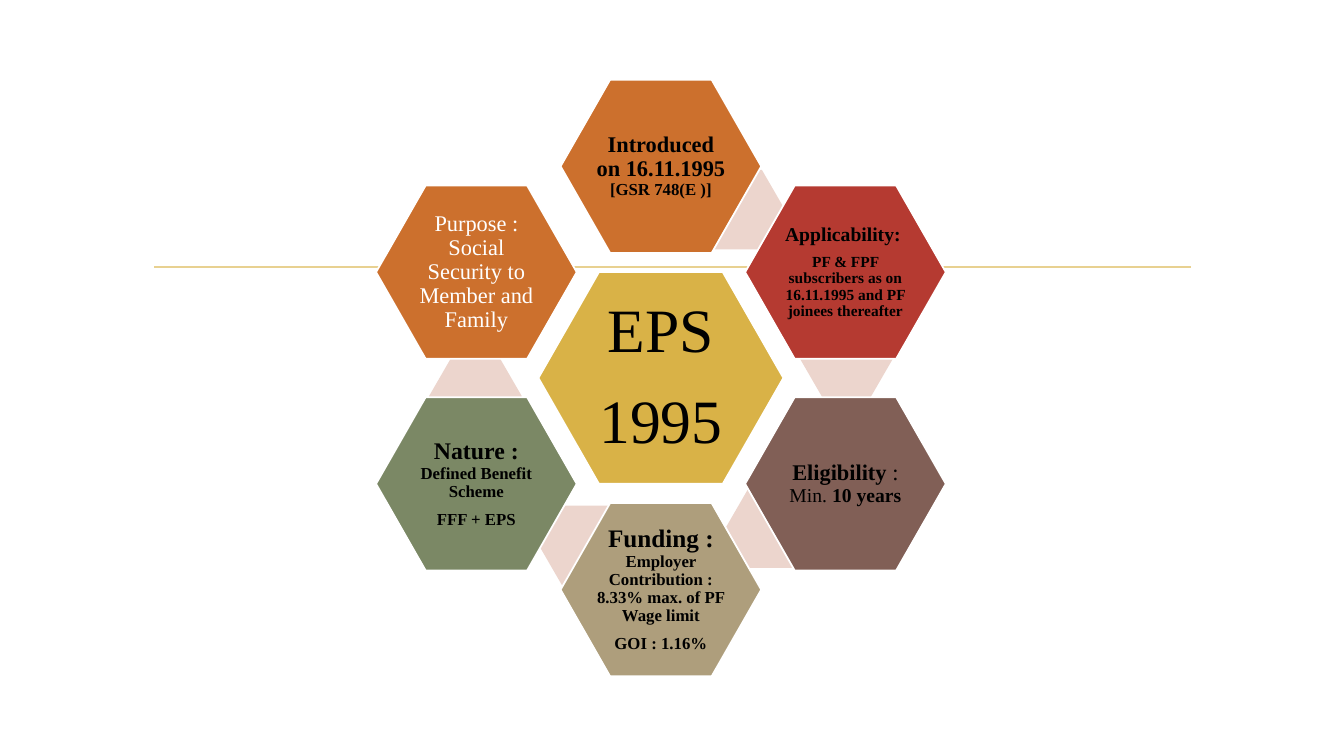
from pptx import Presentation
from pptx.dml.color import RGBColor
from pptx.enum.shapes import MSO_CONNECTOR, MSO_SHAPE
from pptx.enum.text import MSO_ANCHOR, PP_ALIGN
from pptx.oxml.ns import qn
from pptx.util import Inches, Pt
from lxml import etree

HEX = MSO_SHAPE.HEXAGON
STRAIGHT = MSO_CONNECTOR.STRAIGHT
MIDDLE = MSO_ANCHOR.MIDDLE
CENTER = PP_ALIGN.CENTER

BLACK = RGBColor(0x00, 0x00, 0x00)
WHITE = RGBColor(0xFF, 0xFF, 0xFF)
GOLD = RGBColor(0xD9, 0xB2, 0x47)
PALE = RGBColor(0xE8, 0xD1, 0x91)
PINK = RGBColor(0xEC, 0xD5, 0xCD)
ORANGE = RGBColor(0xCC, 0x70, 0x2D)
RED = RGBColor(0xB5, 0x3A, 0x31)
BROWN = RGBColor(0x81, 0x5F, 0x56)
TAN = RGBColor(0xAE, 0x9E, 0x7C)
GREEN = RGBColor(0x7B, 0x88, 0x65)

FONT = "Times New Roman"

# Column and row steps between hexagon centres
DX, DY = 1.83, 1.05

# Each cell: column, row, fill, text colour, paragraphs of (text, size, bold)
CELLS = [
    (0, -2, ORANGE, BLACK, [[("Introduced on 16.11.1995 ", 16, True),
                             ("[GSR 748(E )]", 12, True)]]),
    (1, -1, RED, BLACK, [[("Applicability: ", 14, True)],
                         [("PF & FPF subscribers as on 16.11.1995 and "
                           "PF joinees thereafter", 11, True)]]),
    (1, 1, BROWN, BLACK, [[("Eligibility", 16, True), (" : ", 16, False),
                           ("Min. ", 14, False), ("10 years", 14, True)]]),
    (0, 2, TAN, BLACK, [[("Funding : ", 18, True),
                         ("Employer Contribution : 8.33% max. of PF "
                          "Wage limit", 12, True)],
                        [("GOI : 1.16%", 12, True)]]),
    (-1, 1, GREEN, BLACK, [[("Nature : ", 17, True),
                            ("Defined Benefit Scheme", 12, True)],
                           [("FFF + EPS", 12, True)]]),
    (-1, -1, ORANGE, WHITE, [[("Purpose : Social Security to Member and "
                               "Family", 16, False)]]),
]

# Bridge centres, measured from the hub
BRIDGES = [(0.77, -1.67), (1.84, -0.19), (1.1, 1.49), (-0.75, 1.66),
           (-1.84, 0.18)]


def write(frame, paras, color=BLACK, inset=0.02):
    """Fill a text frame with paragraphs of formatted runs."""
    frame.word_wrap = True
    frame.vertical_anchor = MIDDLE
    frame.margin_left = frame.margin_right = Inches(inset)
    frame.margin_top = frame.margin_bottom = Inches(inset)
    for i, runs in enumerate(paras):
        para = frame.paragraphs[0] if i == 0 else frame.add_paragraph()
        para.alignment = CENTER
        para.line_spacing = 0.9
        para.space_after = Pt(round(0.4 * runs[0][1]))
        for text, size, bold in runs:
            run = para.add_run()
            run.text = text
            run.font.name = FONT
            run.font.size = Pt(size)
            run.font.bold = bold
            run.font.color.rgb = color


def hexagon(slide, x, y, width, height, fill, adj=0.286, line=WHITE):
    """Draw a hexagon centred on x, y."""
    shape = slide.shapes.add_shape(
        HEX, Inches(x - width / 2), Inches(y - height / 2),
        Inches(width), Inches(height))
    shape.shadow.inherit = False
    shape.adjustments[0] = adj
    shape.fill.solid()
    shape.fill.fore_color.rgb = fill
    if line is None:
        shape.line.fill.background()
    else:
        shape.line.color.rgb = line
        shape.line.width = Pt(1.25)
    return shape


def rule(slide, left, y, width):
    """Draw the thin line behind the diagram."""
    line = slide.shapes.add_connector(
        STRAIGHT, Inches(left), Inches(y), Inches(left + width), Inches(y))
    line.line.color.rgb = PALE
    line.line.width = Pt(1.25)
    etree.SubElement(line._element.spPr, qn("a:effectLst"))


def cluster(slide, left, top, width, height):
    """Draw the hub, the bridges and the ring of cells in the given box."""
    x, y = left + width / 2, top + height / 2

    # Hub
    hub = hexagon(slide, x, y, 2.43, 2.1, GOLD)
    write(hub.text_frame, [[("EPS", 44, False)], [("1995", 44, False)]],
          inset=0.06)

    # Bridges lie behind the cells
    for dx, dy in BRIDGES:
        hexagon(slide, x + dx, y + dy, 0.92, 0.79, PINK, adj=0.289, line=None)

    # Ring of cells
    for col, row, fill, color, paras in CELLS:
        cell = hexagon(slide, x + col * DX, y + row * DY, 1.99, 1.72, fill)
        write(cell.text_frame, paras, color=color)


def main():
    deck = Presentation()
    deck.slide_width = Inches(13.33)
    deck.slide_height = Inches(7.5)
    slide = deck.slides.add_slide(deck.slide_layouts[6])
    rule(slide, 1.53, 2.65, 10.28)
    cluster(slide, 3.73, 0.79, 5.65, 5.92)
    deck.save("out.pptx")


if __name__ == "__main__":
    main()
